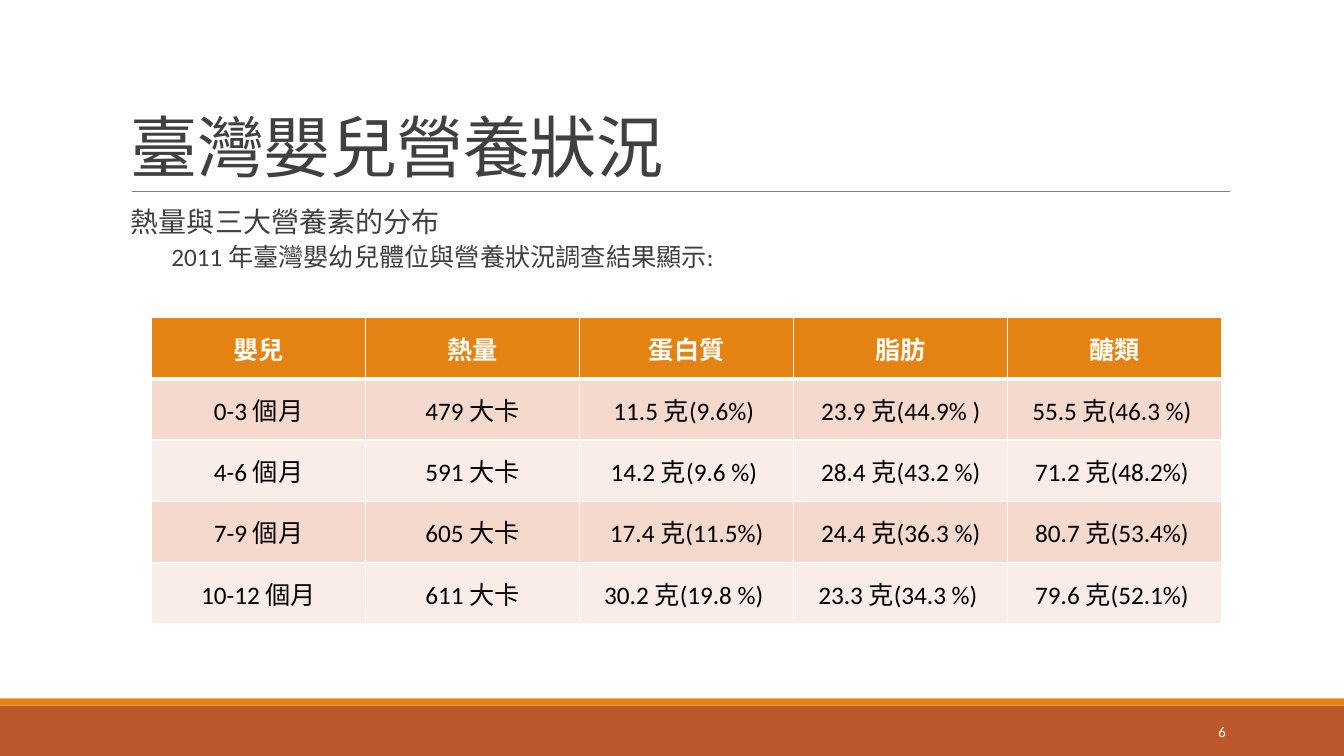
"""Build the slide on the nutrition of infants in Taiwan."""
from lxml import etree
from pptx import Presentation
from pptx.dml.color import RGBColor
from pptx.enum import shapes, text
from pptx.oxml import ns
from pptx.util import Cm, Pt

WHITE = RGBColor(0xFF, 0xFF, 0xFF)
BLACK = RGBColor(0, 0, 0)
DARK = RGBColor(0x40, 0x40, 0x40)
GRAY = RGBColor(0x80, 0x80, 0x80)
RUST = RGBColor(0xBD, 0x58, 0x2C)
ORANGE = RGBColor(0xE4, 0x83, 0x12)
BANDS = [RGBColor(0xFA, 0xED, 0xE7), RGBColor(0xF5, 0xD9, 0xCC)]


def style(para, size, color, bold=False):
    for run in para.runs:
        run.font.name = "Calibri"
        run.font.size = Pt(size)
        run.font.color.rgb = color
        run.font.bold = bold


def add_box(left, top, width, height, lines, anchor):
    box = slide.shapes.add_textbox(Cm(left), Cm(top), Cm(width), Cm(height))
    frame = box.text_frame
    frame.word_wrap = True
    frame.vertical_anchor = anchor
    frame.text = lines
    return frame


deck = Presentation()
deck.slide_width, deck.slide_height = Cm(33.87), Cm(19.05)
slide = deck.slides.add_slide(deck.slide_layouts[6])

for top, height, color in [(17.78, 1.27, RUST), (17.6, 0.18, ORANGE)]:
    bar = slide.shapes.add_shape(
        shapes.MSO_SHAPE.RECTANGLE, 0, Cm(top), deck.slide_width, Cm(height))
    bar.shadow.inherit = False
    bar.fill.solid()
    bar.fill.fore_color.rgb = color
    bar.line.fill.background()

rule = slide.shapes.add_connector(
    shapes.MSO_CONNECTOR.STRAIGHT, Cm(3.32), Cm(4.82), Cm(31), Cm(4.82))
rule.line.color.rgb = GRAY
rule.line.width = Pt(0.5)
etree.SubElement(rule._element.spPr, ns.qn("a:effectLst"))

title = add_box(3.05, 0.79, 27.94, 4.03, "臺灣嬰兒營養狀況", text.MSO_ANCHOR.BOTTOM)
head = title.paragraphs[0]
head.line_spacing = 0.85
style(head, 48, DARK)
head.runs[0].font._element.set("spc", "-50")

body = add_box(3.05, 5.13, 27.94, 11.18,
               "熱量與三大營養素的分布\n2011 年臺灣嬰幼兒體位與營養狀況調查結果顯示:",
               text.MSO_ANCHOR.TOP)
body.margin_left = body.margin_right = 0
looks = [(20, 12, 2, 0.25), (18, 2, 4, 1.27)]
for para, (size, before, after, indent) in zip(body.paragraphs, looks):
    para.line_spacing = 0.9
    para.space_before, para.space_after = Pt(before), Pt(after)
    para._p.get_or_add_pPr().set("marL", str(Cm(indent)))
    style(para, size, DARK)

rows = [
    ["嬰兒", "熱量", "蛋白質", "脂肪", "醣類"],
    ["0-3 個月", "479 大卡", "11.5 克(9.6%) ", "23.9 克(44.9% )", "55.5 克(46.3 %) "],
    ["4-6 個月", "591 大卡", "14.2 克(9.6 %) ", "28.4 克(43.2 %)", "71.2 克(48.2%) "],
    ["7-9 個月", "605 大卡", "17.4 克(11.5%)", "24.4 克(36.3 %)", "80.7 克(53.4%) "],
    ["10-12 個月", "611 大卡", "30.2 克(19.8 %) ", "23.3 克(34.3 %) ", "79.6 克(52.1%) "],
]
table = slide.shapes.add_table(
    len(rows), len(rows[0]), Cm(3.82), Cm(8), Cm(26.97), Cm(7.72)).table
for r, row in enumerate(rows):
    for c, words in enumerate(row):
        cell = table.cell(r, c)
        cell.text = words
        cell.vertical_anchor = text.MSO_ANCHOR.MIDDLE
        para = cell.text_frame.paragraphs[0]
        para.alignment = text.PP_ALIGN.CENTER
        style(para, 18, BLACK if r else WHITE, r == 0)
        for side in "LRTB":
            thick = (r, side) in [(0, "B"), (1, "T")]
            edge = etree.SubElement(cell._tc.get_or_add_tcPr(), ns.qn("a:ln" + side),
                                    w=str(Pt(3 if thick else 1)))
            fill = etree.SubElement(edge, ns.qn("a:solidFill"))
            etree.SubElement(fill, ns.qn("a:srgbClr"), val=str(WHITE))
        cell.fill.solid()
        cell.fill.fore_color.rgb = BANDS[r % 2] if r else ORANGE

page = add_box(27.51, 17.93, 3.63, 1.02, "6", text.MSO_ANCHOR.MIDDLE)
page.paragraphs[0].alignment = text.PP_ALIGN.RIGHT
style(page.paragraphs[0], 10.5, WHITE)

deck.save("out.pptx")
